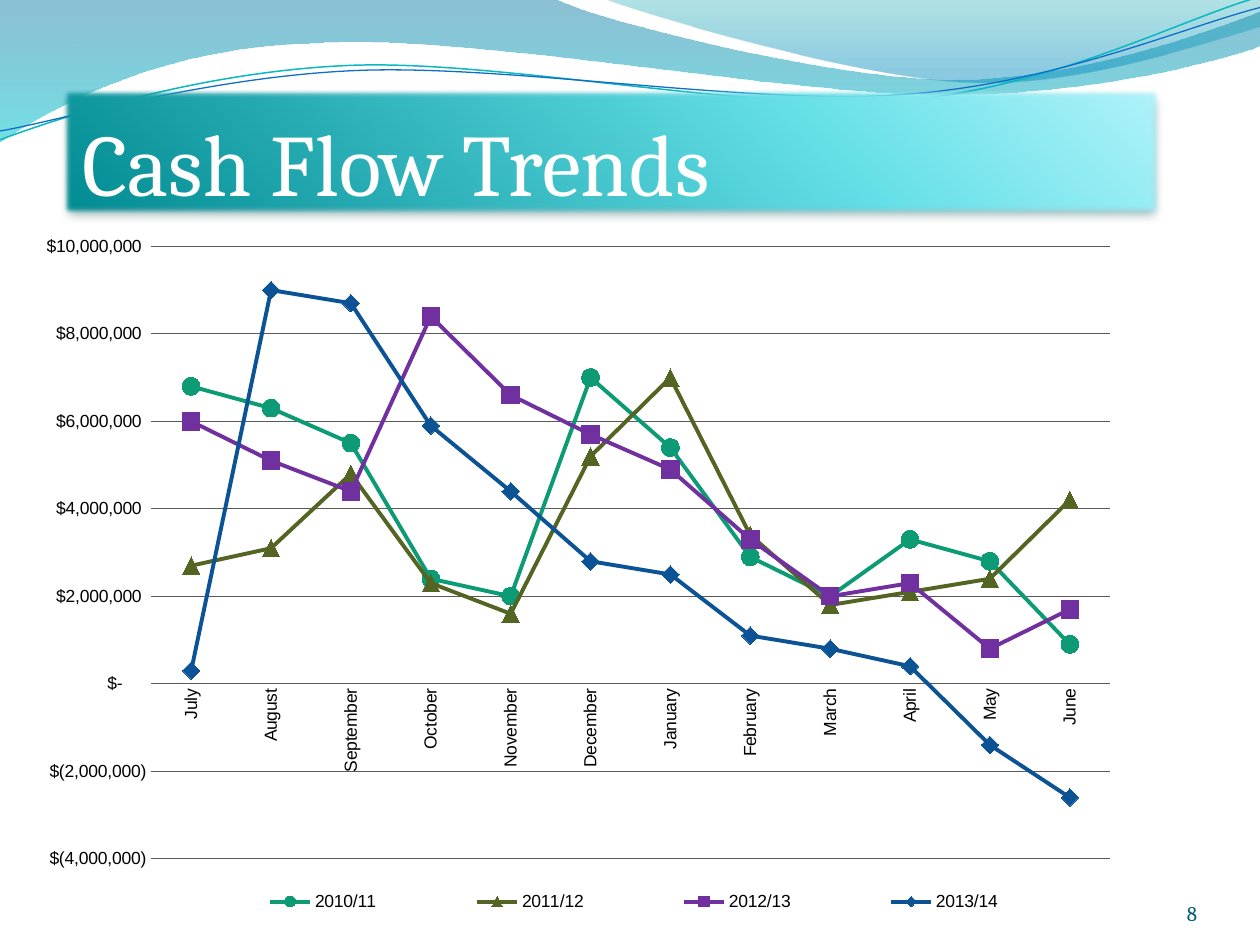
"""Build the Cash Flow Trends slide with its wave header and line chart."""
from lxml import etree
from pptx import Presentation, util as u
from pptx.chart.data import CategoryChartData
from pptx.dml.color import RGBColor
from pptx.enum import chart as ch, shapes, text
from pptx.oxml import parse_xml
from pptx.oxml.ns import qn

COLORS = {
    "white": "FFFFFF", "black": "000000", "grid": "595959", "number": "045D75",
    "shadow": "024B4E", "teal line": "0AB8BF", "blue line": "0F6FC6",
}
TITLE = " Cash Flow Trends"
PAGE = "8"
MONTHS = ["July", "August", "September", "October", "November", "December",
          "January", "February", "March", "April", "May", "June"]
MARK = ch.XL_MARKER_STYLE
SERIES = [
    ("2010/11", "0C9B74", MARK.CIRCLE,
     [6.8, 6.3, 5.5, 2.4, 2.0, 7.0, 5.4, 2.9, 2.0, 3.3, 2.8, 0.9]),
    ("2011/12", "546422", MARK.TRIANGLE,
     [2.7, 3.1, 4.8, 2.3, 1.6, 5.2, 7.0, 3.4, 1.8, 2.1, 2.4, 4.2]),
    ("2012/13", "7030A0", MARK.SQUARE,
     [6.0, 5.1, 4.4, 8.4, 6.6, 5.7, 4.9, 3.3, 2.0, 2.3, 0.8, 1.7]),
    ("2013/14", "0B5394", MARK.DIAMOND,
     [0.3, 9.0, 8.7, 5.9, 4.4, 2.8, 2.5, 1.1, 0.8, 0.4, -1.4, -2.6]),
]
MILLION = 1_000_000
DOLLARS = '_("$"* #,##0_);_("$"* \\(#,##0\\);_("$"* "-"??_);_(@_)'
PLOT_BOX = {"x": 0.107, "y": 0.023, "w": 0.79, "h": 0.887}
LEGEND_BOX = {"x": 0.127, "y": 0.947, "w": 0.756, "h": 0.05}

DOWN = '<a:lin ang="5400000" scaled="1"/>'
FROM_CORNER = '<a:path path="circle"><a:fillToRect t="100000" r="100000"/></a:path>'
BANDS = [
    ([(0, 0), (4.4, -0.01), (4.76, 0.17, 6.64, 0.63, 7.58, 0.63),
      (8.53, 0.63, 9.58, 0.26, 10, 0.09), (10.01, 0.36),
      (9.83, 0.44, 8.7, 0.76, 7.46, 0.75), (6.22, 0.75, 3.82, 0.28, 2.57, 0.34),
      (1.29, 0.36, 0.46, 0.83, -0.01, 1.13)],
     [(0, "0074A1", 45), (100, "00C6CF", 55)]),
    ([(4.79, -0.01), (5.09, 0.11, 6.82, 0.62, 7.69, 0.65),
      (8.56, 0.69, 9.61, 0.32, 10, 0.21), (10, 0)],
     [(0, "00A1A9", 30), (80, "008BBF", 45)]),
]
WAVES = [
    ([(0, 1.11), (0.48, 0.93, 1.58, 0.57, 2.77, 0.52),
      (3.95, 0.47, 5.93, 0.89, 7.13, 0.8), (8.33, 0.71, 9.38, 0.15, 9.98, -0.02)],
     "teal line", 0.85),
    ([(0, 1.04), (0.47, 0.96, 1.64, 0.61, 2.83, 0.56),
      (4.03, 0.51, 5.97, 0.84, 7.17, 0.75), (8.36, 0.67, 9.41, 0.21, 10, 0.06)],
     "blue line", 0.75),
]
TITLE_STOPS = [(0, "008A91", 100), (68, "64DFE7", 100), (100, "B1F3F9", 100)]
A_NS = 'xmlns:a="http://schemas.openxmlformats.org/drawingml/2006/main"'


def rgb(value):
    return RGBColor.from_string(COLORS.get(value, value))


def add_outline(s, steps, close):
    points = [(u.Inches(step[i]), u.Inches(step[i + 1]))
              for step in steps for i in range(0, len(step), 2)]
    builder = s.shapes.build_freeform(*points[0])
    builder.add_line_segments(points[1:], close=close)
    sp = builder.convert_to_shape()
    sp.shadow.inherit = False
    segments = iter(list(sp._element.iter(qn("a:lnTo"))))
    for step in steps[1:]:
        first = next(segments)
        if len(step) == 6:
            curve = etree.Element(qn("a:cubicBezTo"))
            first.getparent().replace(first, curve)
            curve.append(first[0])
            for _ in range(2):
                control = next(segments)
                curve.append(control[0])
                control.getparent().remove(control)
    return sp


def fill_gradient(sp, stops, direction):
    sp.fill.background()
    old = sp._element.spPr.find(qn("a:noFill"))
    gs = "".join(f'<a:gs pos="{pos * 1000}"><a:srgbClr val="{color}">'
                 f'<a:alpha val="{alpha * 1000}"/></a:srgbClr></a:gs>'
                 for pos, color, alpha in stops)
    old.getparent().replace(old, parse_xml(
        f'<a:gradFill {A_NS} rotWithShape="1"><a:gsLst>{gs}</a:gsLst>{direction}</a:gradFill>'))
    sp.line.fill.background()


def style_font(font, name, size, color):
    font.name, font.size, font.color.rgb = name, u.Pt(size), rgb(color)


def write(sp, words, size, color, align, top=0):
    tf = sp.text_frame
    tf.word_wrap = True
    tf.vertical_anchor = text.MSO_ANCHOR.BOTTOM
    tf.margin_left = tf.margin_right = tf.margin_bottom = 0
    tf.margin_top = u.Inches(top)
    tf.text = words
    p = tf.paragraphs[0]
    p.alignment = align
    style_font(p.runs[0].font, "Cambria", size, color)


def add_header(s):
    for steps, stops in BANDS:
        fill_gradient(add_outline(s, steps, True), stops, DOWN)
    for steps, color, width in WAVES:
        sp = add_outline(s, steps, False)
        sp.fill.background()
        sp.line.color.rgb, sp.line.width = rgb(color), u.Pt(width)


def add_title(s):
    box = map(u.Inches, (0.5, 0.7, 8.7, 1))
    sp = s.shapes.add_shape(shapes.MSO_SHAPE.RECTANGLE, *box)
    sp.shadow.inherit = False
    fill_gradient(sp, TITLE_STOPS, FROM_CORNER)
    effects = sp._element.spPr.find(qn("a:effectLst"))
    effects.append(parse_xml(
        f'<a:outerShdw {A_NS} blurRad="57150" dist="38100" dir="5400000" rotWithShape="0">'
        f'<a:srgbClr val="{COLORS["shadow"]}"><a:alpha val="48000"/></a:srgbClr></a:outerShdw>'))
    effects.append(parse_xml(f'<a:softEdge {A_NS} rad="31750"/>'))
    write(sp, TITLE, 50, "white", text.PP_ALIGN.LEFT, 0.05)


def set_layout(parent, before, box, inner=False):
    for old in parent.findall(qn("c:layout")):
        parent.remove(old)
    layout = etree.Element(qn("c:layout"))
    manual = etree.SubElement(layout, qn("c:manualLayout"))
    items = [("layoutTarget", "inner")] if inner else []
    items += [("xMode", "edge"), ("yMode", "edge"), *box.items()]
    for tag, value in items:
        etree.SubElement(manual, qn(f"c:{tag}")).set("val", str(value))
    parent.insert(parent.index(parent.find(qn(before))) + 1 if before else 0, layout)


def add_cash_chart(s):
    data = CategoryChartData(number_format=DOLLARS)
    data.categories = MONTHS
    for name, _, _, values in SERIES:
        data.add_series(name, [round(v * MILLION) for v in values])
    box = map(u.Inches, (0.17, 1.83, 9.63, 5.48))
    chart = s.shapes.add_chart(ch.XL_CHART_TYPE.LINE_MARKERS, *box, data).chart
    style_font(chart.font, "Arial", 10, "black")
    chart.has_title = False
    chart.has_legend = True
    chart.legend.position = ch.XL_LEGEND_POSITION.BOTTOM
    chart.legend.include_in_layout = False
    style_font(chart.legend.font, "Arial", 10, "black")

    months, money = chart.category_axis, chart.value_axis
    for axis in (months, money):
        axis.major_tick_mark = axis.minor_tick_mark = ch.XL_TICK_MARK.NONE
        style_font(axis.tick_labels.font, "Arial", 10, "black")
    months._element.find(qn("c:txPr")).find(qn("a:bodyPr")).set("rot", "-5400000")
    money.minimum_scale, money.maximum_scale = -4 * MILLION, 10 * MILLION
    money.major_unit = 2 * MILLION
    money.tick_labels.number_format = DOLLARS
    money.tick_labels.number_format_is_linked = False
    money.format.line.fill.background()
    for line in (money.major_gridlines.format.line, months.format.line):
        line.color.rgb, line.width = rgb("grid"), u.Pt(0.75)

    chart.plots[0].vary_by_categories = False
    for series, (_, color, marker, _) in zip(chart.plots[0].series, SERIES):
        series.smooth = False
        series.format.line.color.rgb, series.format.line.width = rgb(color), u.Pt(2.25)
        series.marker.style, series.marker.size = marker, 10
        series.marker.format.fill.solid()
        series.marker.format.fill.fore_color.rgb = rgb(color)
        series.marker.format.line.color.rgb = rgb(color)
    set_layout(money._element.getparent(), None, PLOT_BOX, True)
    set_layout(chart.legend._element, "c:legendPos", LEGEND_BOX)


def main():
    prs = Presentation()
    prs.slide_width, prs.slide_height = u.Inches(10), u.Inches(7.5)
    s = prs.slides.add_slide(prs.slide_layouts[6])
    add_header(s)
    add_title(s)
    add_cash_chart(s)
    number = s.shapes.add_textbox(*map(u.Inches, (8.67, 6.95, 0.83, 0.4)))
    write(number, PAGE, 12, "number", text.PP_ALIGN.RIGHT)
    prs.save("out.pptx")


if __name__ == "__main__":
    main()
